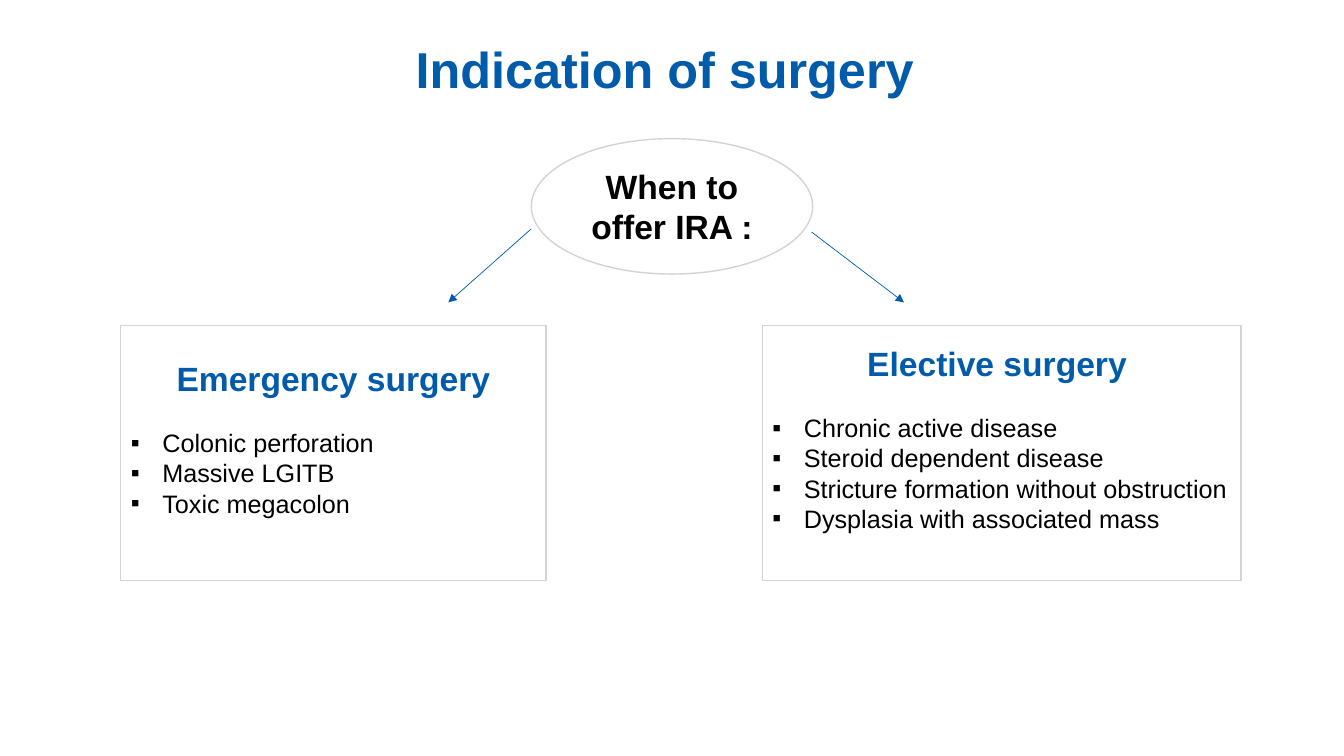
from dataclasses import dataclass
from typing import Any

from lxml.etree import SubElement
from pptx import Presentation
from pptx.dml.color import RGBColor
from pptx.enum.shapes import MSO_CONNECTOR as Connector, MSO_SHAPE as Preset
from pptx.enum.text import MSO_ANCHOR as Anchor, MSO_AUTO_SIZE as AutoSize, PP_ALIGN as Align
from pptx.oxml.ns import qn
from pptx.util import Emu, Pt

EMU_PER_PX = 9525
COLORS = {"blue": "005BAA", "border": "D7D2D1", "ink": "000000", "paper": "FFFFFF"}
TITLE_FONT = {"name": "Arial", "size": Pt(36), "bold": True}
HEADING_FONT = {"name": "Arial", "size": Pt(24), "bold": True}
ITEM_FONT = {"name": "Arial", "size": Pt(18), "bold": False}
HEADING_FORMAT = {"alignment": Align.CENTER, "space_before": Pt(0), "space_after": Pt(20.7)}
ITEM_FORMAT = {"alignment": Align.LEFT, "space_before": Pt(0), "space_after": Pt(0)}
LIST_INDENT = 30
CARD_TOP, CARD_HEIGHT = 310, 243


@dataclass(frozen=True)
class Card:
    left: int
    width: int
    heading: str
    items: tuple[str, ...]


@dataclass(frozen=True)
class Arrow:
    start: tuple[int, int]
    end: tuple[int, int]


CARDS = (
    Card(115, 405, "Emergency surgery",
         ("Colonic perforation", "Massive LGITB", "Toxic megacolon")),
    Card(726, 456, "Elective surgery ",
         ("Chronic active disease", "Steroid dependent disease",
          "Stricture formation without obstruction", "Dysplasia with associated mass")),
)
ARROWS = (Arrow((506, 218), (427, 288)), Arrow((773, 221), (861, 288)))


def px(length: int) -> Emu:
    return Emu(length * EMU_PER_PX)


def color(name: str) -> RGBColor:
    return RGBColor.from_string(COLORS[name])


def apply(target: Any, values: dict[str, Any]) -> None:
    for name, value in values.items():
        setattr(target, name, value)


def place(shape: Any, left: int, top: int, width: int, height: int) -> None:
    apply(shape, {"left": px(left), "top": px(top), "width": px(width), "height": px(height)})


def outline(shape: Any) -> None:
    shape.fill.solid()
    shape.fill.fore_color.rgb = color("paper")
    shape.line.color.rgb = color("border")
    shape.line.width = Pt(1)


def write(para: Any, text: str, font: dict[str, Any], ink: str) -> None:
    span = para.add_run()
    span.text = text
    apply(span.font, font)
    span.font.color.rgb = color(ink)


def set_bullet(para: Any, char: str = "") -> None:
    props = para._p.get_or_add_pPr()
    indent = px(LIST_INDENT) if char else 0
    props.set("marL", str(indent))
    props.set("indent", str(-indent))
    if char:
        SubElement(props, qn("a:buFont"), typeface="Arial")
        SubElement(props, qn("a:buChar"), char=char)
    else:
        SubElement(props, qn("a:buNone"))


def add_title(page: Any) -> None:
    title = page.shapes.title
    place(title, 88, 38, 1104, 139)
    apply(title.text_frame, {"vertical_anchor": Anchor.TOP, "word_wrap": True,
                             "auto_size": AutoSize.NONE})
    para = title.text_frame.paragraphs[0]
    apply(para, {"alignment": Align.CENTER, "line_spacing": 0.9})
    write(para, "Indication of surgery ", TITLE_FONT, "blue")


def add_question(page: Any) -> None:
    oval = page.shapes.add_shape(Preset.OVAL, px(506), px(132), px(268), px(129))
    oval.shadow.inherit = False
    outline(oval)
    apply(oval.text_frame, {"vertical_anchor": Anchor.MIDDLE, "word_wrap": True})
    para = oval.text_frame.paragraphs[0]
    para.alignment = Align.CENTER
    write(para, "When to offer IRA :", HEADING_FONT, "ink")


def fill_card(body: Any, card: Card) -> None:
    place(body, card.left, CARD_TOP, card.width, CARD_HEIGHT)
    outline(body)
    frame = body.text_frame
    apply(frame, {"vertical_anchor": Anchor.MIDDLE, "word_wrap": True,
                  "auto_size": AutoSize.NONE, "margin_bottom": px(33)})
    heading = frame.paragraphs[0]
    set_bullet(heading)
    apply(heading, HEADING_FORMAT)
    write(heading, card.heading, HEADING_FONT, "blue")
    for item in card.items:
        para = frame.add_paragraph()
        set_bullet(para, "▪")
        apply(para, ITEM_FORMAT)
        write(para, item, ITEM_FONT, "ink")


def add_arrow(page: Any, arrow: Arrow) -> None:
    points = [px(value) for value in (*arrow.start, *arrow.end)]
    connector = page.shapes.add_connector(Connector.STRAIGHT, *points)
    connector.line.color.rgb = color("blue")
    connector.line.width = Pt(0.5)
    SubElement(connector.line._get_or_add_ln(), qn("a:tailEnd"), type="triangle")
    SubElement(connector._element.spPr, qn("a:effectLst"))


def main() -> None:
    deck = Presentation()
    apply(deck, {"slide_width": px(1280), "slide_height": px(720)})
    page = deck.slides.add_slide(deck.slide_layouts.get_by_name("Two Content"))
    add_title(page)
    add_question(page)
    for index, card in enumerate(CARDS, start=1):
        fill_card(page.placeholders[index], card)
    for arrow in ARROWS:
        add_arrow(page, arrow)
    deck.save("out.pptx")


if __name__ == "__main__":
    main()
